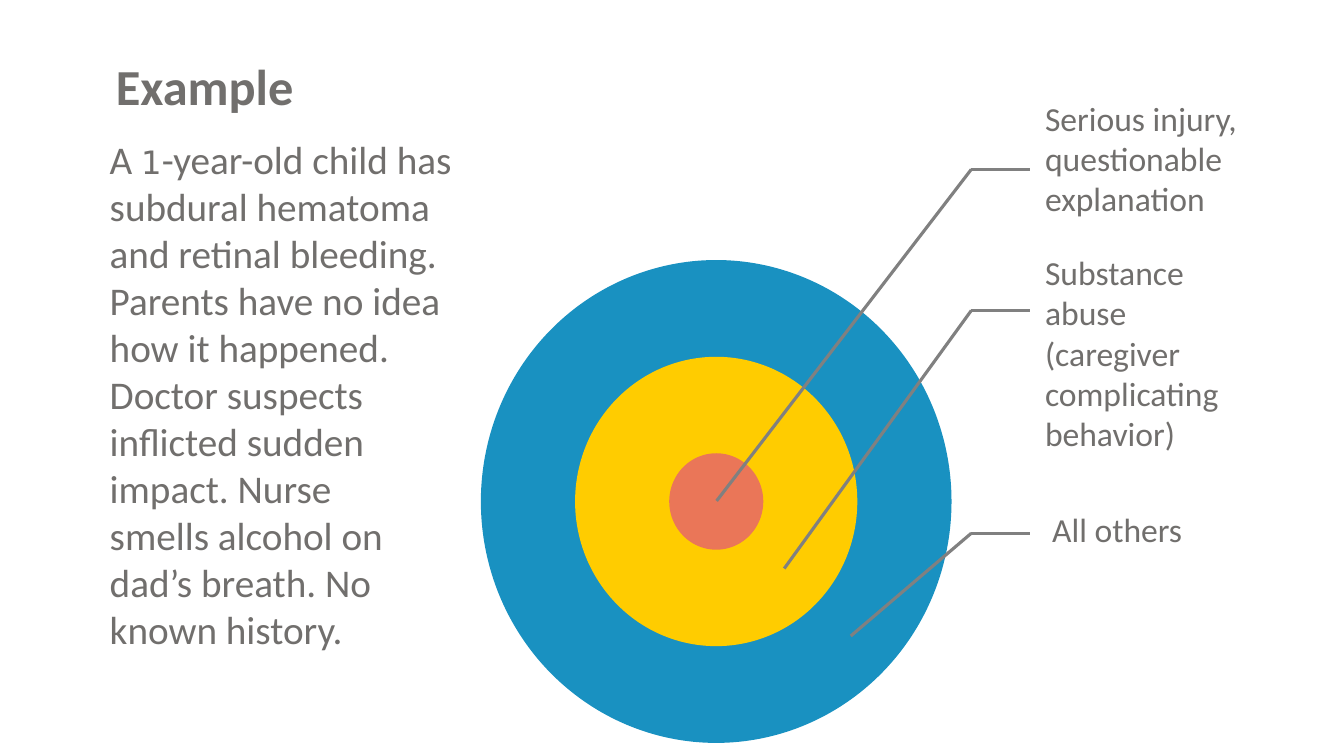
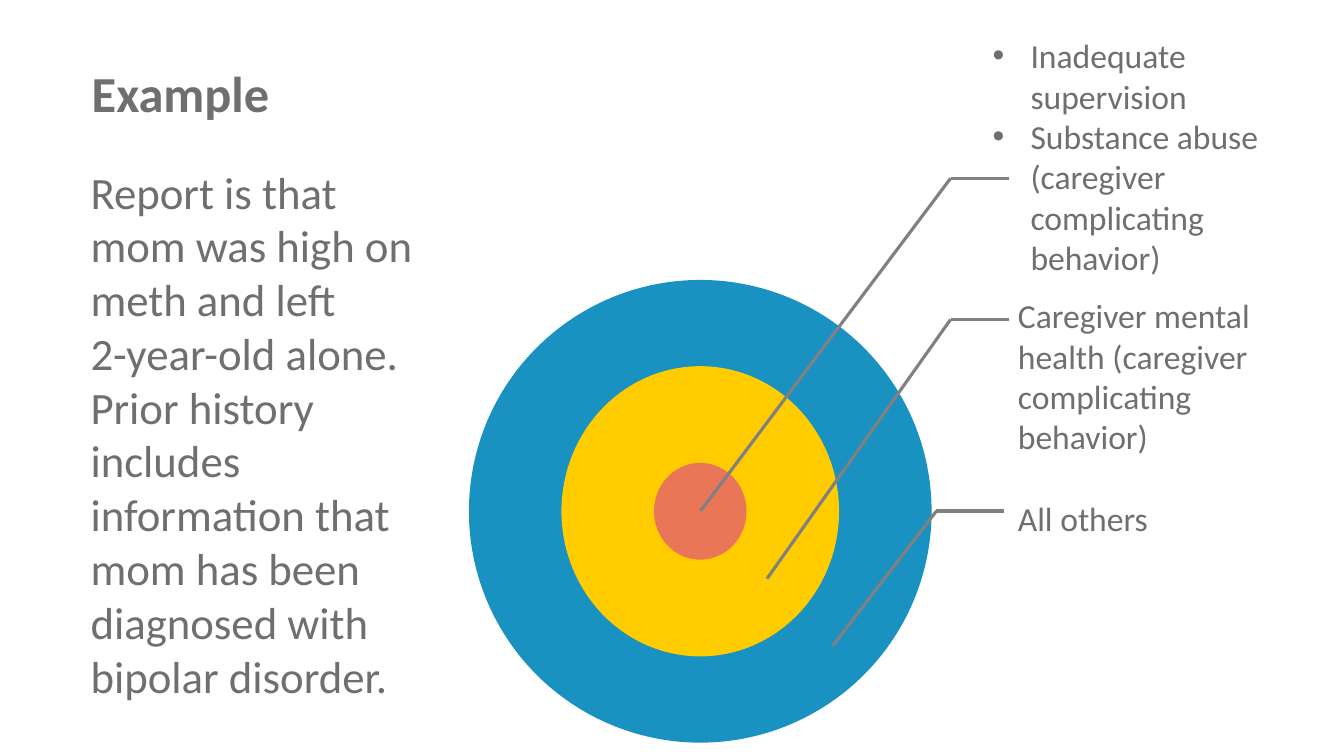
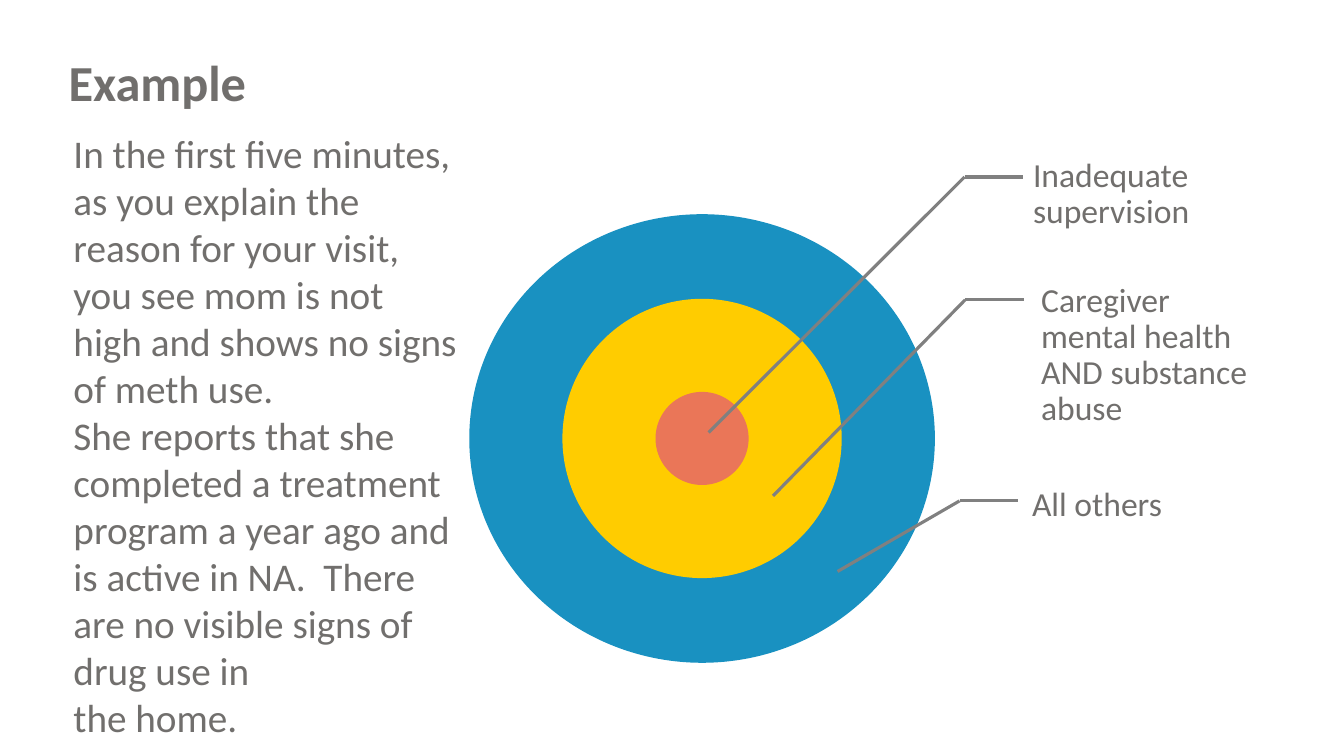
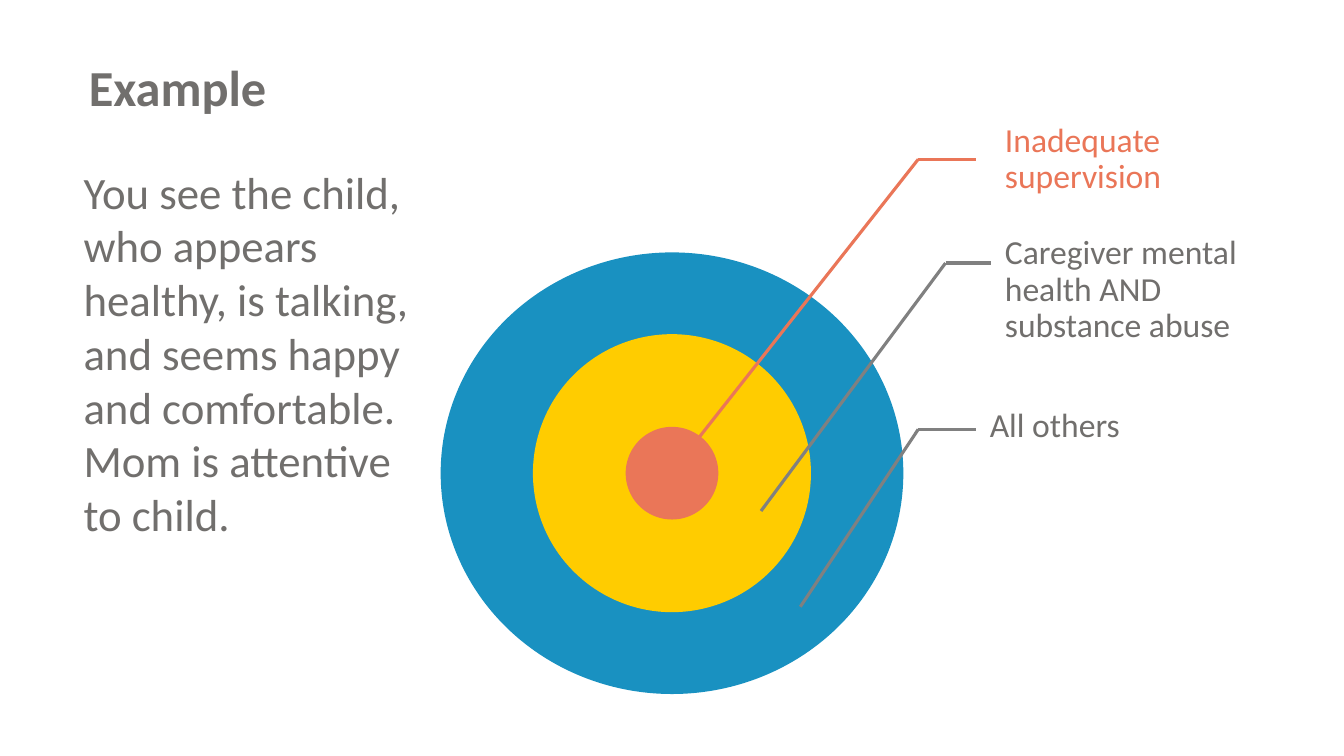
import lxml.etree
import pptx
import pptx.dml.color
import pptx.enum.shapes
import pptx.enum.text
import pptx.oxml.ns
import pptx.util

Pt = pptx.util.Pt
ANCHOR = pptx.enum.text.MSO_ANCHOR
COLORS = {"text": "716F6D", "outer": "1991C1", "middle": "FFCC00", "core": "EA7658", "line": "808080"}
BASE_FONT = {"name": "Calibri", "size": Pt(24), "bold": False}
TITLE_FONT = {"size": Pt(36), "bold": True}
ROOMY = {"word_wrap": True, "auto_size": pptx.enum.text.MSO_AUTO_SIZE.SHAPE_TO_FIT_TEXT}
SNUG = {
    "word_wrap": True,
    "auto_size": pptx.enum.text.MSO_AUTO_SIZE.NONE,
    "margin_left": Pt(10),
    "margin_right": Pt(2),
    "margin_top": Pt(2),
    "margin_bottom": Pt(2),
}
SNUG_MIDDLE = {**SNUG, "vertical_anchor": ANCHOR.MIDDLE}
TITLE_FRAME = {
    "word_wrap": True,
    "auto_size": pptx.enum.text.MSO_AUTO_SIZE.NONE,
    "vertical_anchor": ANCHOR.MIDDLE,
}


def color(name):
    """Return the named colour."""
    return pptx.dml.color.RGBColor.from_string(COLORS[name])


def apply(target, values):
    """Set each value of a dict as an attribute."""
    for name, value in values.items():
        setattr(target, name, value)


def add_span(para, text, font, paint="text"):
    """Add text to a paragraph, with line breaks where it has newlines."""
    for index, piece in enumerate(text.split("\n")):
        if index:
            para.add_line_break()
        span = para.add_run()
        span.text = piece
        apply(span.font, {**BASE_FONT, **font})
        span.font.color.rgb = color(paint)


def set_indent(para, left, first=0):
    """Set the left margin and first-line indent of a paragraph."""
    properties = para._p.get_or_add_pPr()
    properties.set("marL", str(Pt(left)))
    properties.set("indent", str(Pt(first)))
    return properties


def add_bullet(para):
    """Give a paragraph a hanging round bullet."""
    properties = set_indent(para, 27, -27)
    font = lxml.etree.SubElement(properties, pptx.oxml.ns.qn("a:buFont"))
    font.set("typeface", "Arial")
    mark = lxml.etree.SubElement(properties, pptx.oxml.ns.qn("a:buChar"))
    mark.set("char", "•")


def add_title(page, left, top):
    """Place and format the slide title."""
    box = page.shapes.title
    apply(box, {"left": Pt(left), "top": Pt(top), "width": Pt(838.8), "height": Pt(88.6)})
    apply(box.text_frame, TITLE_FRAME)
    para = box.text_frame.paragraphs[0]
    set_indent(para, 18)
    apply(para, {"alignment": pptx.enum.text.PP_ALIGN.LEFT, "line_spacing": 0.9})
    add_span(para, "Example", TITLE_FONT)


def add_text(page, place, paras, size=24, frame=ROOMY, paint="text", bullets=False):
    """Add a text box whose paragraphs are lists of text and font pairs or plain strings."""
    box = page.shapes.add_textbox(*map(Pt, place))
    apply(box.text_frame, frame)
    for index, content in enumerate(paras):
        para = box.text_frame.add_paragraph() if index else box.text_frame.paragraphs[0]
        if bullets:
            add_bullet(para)
        if frame is not ROOMY:
            para.line_spacing = 0.9
        spans = [(content, {})] if isinstance(content, str) else content
        for text, font in spans:
            add_span(para, text, {"size": Pt(size), **font}, paint)


def add_target(page, center, outer, core):
    """Draw three concentric ellipses, the middle one three times the core."""
    middle = [3 * length for length in core]
    for paint, (width, height) in (("outer", outer), ("middle", middle), ("core", core)):
        left, top = center[0] - width / 2, center[1] - height / 2
        ring = page.shapes.add_shape(
            pptx.enum.shapes.MSO_SHAPE.OVAL, Pt(left), Pt(top), Pt(width), Pt(height)
        )
        ring.shadow.inherit = False
        ring.fill.solid()
        ring.fill.fore_color.rgb = color(paint)
        ring.line.fill.background()


def add_leader(page, elbow, label_x, tip, paint="line"):
    """Draw a bent leader from a label to a ring."""
    for end in ((label_x, elbow[1]), tip):
        line = page.shapes.add_connector(
            pptx.enum.shapes.MSO_CONNECTOR.STRAIGHT, *map(Pt, (*elbow, *end))
        )
        line.line.color.rgb = color(paint)
        line.line.width = Pt(2.25)
        lxml.etree.SubElement(line._element.spPr, pptx.oxml.ns.qn("a:effectLst"))


def add_example(deck, title, target, leaders):
    """Add a slide with its title, target and leaders."""
    page = deck.slides.add_slide(deck.slide_layouts[5])
    add_title(page, *title)
    add_target(page, *target)
    for leader in leaders:
        add_leader(page, *leader)
    return page


def add_injury(deck):
    """Build the example of a serious injury."""
    page = add_example(
        deck,
        (57.6, 19.4),
        ((511.6, 358.2), (336.2, 344.9), (67.2, 68.9)),
        [
            ((693.8, 121), 736, (511.9, 357.8)),
            ((693.8, 221.8), 736, (560.2, 406.1)),
            ((693.8, 380.9), 736, (607.7, 454.3)),
        ],
    )
    story = [
        ("A ", {}),
        ("1", {"name": "DejaVu Sans", "size": Pt(23)}),
        (
            "-year-old child has subdural hematoma and retinal bleeding.  "
            "Parents have no idea how it happened.  Doctor suspects inflicted sudden impact. "
            "Nurse \nsmells alcohol on dad’s breath. No known history.",
            {},
        ),
    ]
    add_text(page, (71.3, 92.9, 270, 380.2), [story], 28)
    add_text(page, (739.4, 66.2, 157, 94.3), ["Serious injury,", "questionable explanation"])
    add_text(
        page, (739.4, 176.4, 157, 152.6), ["Substance abuse (caregiver complicating behavior)"]
    )
    add_text(page, (744.5, 360, 126.7, 36), ["All others"])


def add_report(deck):
    """Build the example of a child left alone."""
    page = add_example(
        deck,
        (40.3, 24.5),
        ((500.2, 365.2), (330.5, 330.5), (66.1, 69.1)),
        [
            ((679, 127.4), 720.7, (500.4, 365)),
            ((679, 228.2), 720.7, (547.9, 413.3)),
            ((668.9, 365), 717.1, (594.7, 461.5)),
        ],
    )
    story = [
        "Report is that mom was high on meth and left",
        "2-year-old alone.  Prior history includes information that mom has been "
        "diagnosed with \nbipolar disorder.",
    ]
    add_text(page, (57.6, 113.8, 259.2, 395.3), story, 32)
    add_text(
        page,
        (702, 21.6, 209.5, 181.4),
        ["Inadequate supervision", "Substance abuse (caregiver complicating behavior)"],
        bullets=True,
    )
    add_text(
        page,
        (720, 207.4, 193.7, 123.8),
        ["Caregiver mental health (caregiver complicating behavior)"],
    )
    add_text(page, (720, 352.1, 124.6, 36), ["All others"])


def add_visit(deck):
    """Build the example of the first five minutes."""
    page = add_example(
        deck,
        (23.8, 16.6),
        ((501.5, 313.2), (332.6, 320.4), (66.5, 66.5)),
        [
            ((689, 126.4), 730.8, (506.2, 308.9)),
            ((689.4, 214.2), 731.5, (552.2, 354.2)),
            ((685.4, 357.8), 727.2, (598.3, 408.2)),
        ],
    )
    story = (
        "In the first five minutes, as you explain the reason for your visit, "
        "you see mom is not high and shows no signs of meth use. \n"
        "She reports that she completed a treatment program a year ago and is active in NA.  "
        "There are no visible signs of drug use in \nthe home."
    )
    add_text(page, (45.4, 88.6, 288, 448.6), [story], 28)
    add_text(page, (727.9, 101.5, 175, 74.9), ["Inadequate supervision"], frame=SNUG_MIDDLE)
    add_text(
        page,
        (733.7, 200.2, 175, 97.2),
        ["Caregiver mental health AND substance abuse"],
        frame=SNUG,
    )
    add_text(page, (727.2, 346.3, 175, 97.2), ["All others"], frame=SNUG)


def add_healthy_child(deck):
    """Build the example of a healthy child."""
    page = add_example(
        deck,
        (38.2, 20.2),
        ((480, 338), (330.5, 315.4), (66.2, 66.2)),
        [
            ((655.9, 113.8), 697, (476.6, 341.3), "core"),
            ((675.4, 187.9), 707.8, (543.6, 365)),
            ((655.9, 306.7), 697, (571.7, 433.4)),
        ],
    )
    story = (
        "You see the child, who appears healthy, is talking,  and seems happy and comfortable.  "
        "Mom is attentive to child."
    )
    add_text(page, (52.6, 113.8, 256.3, 278.6), [story], 32)
    labels = [
        ((707.8, 90, 188.6, 48.2), "Inadequate supervision", "core"),
        ((707.8, 156.2, 190.1, 102.2), "Caregiver mental health AND substance abuse", "text"),
        ((697, 265.7, 188.6, 77.8), "All others", "text"),
    ]
    for place, label, paint in labels:
        add_text(page, place, [label], frame=SNUG_MIDDLE, paint=paint)


def main():
    """Build and save the deck."""
    deck = pptx.Presentation()
    apply(deck, {"slide_width": Pt(960), "slide_height": Pt(540)})
    for add_page in (add_injury, add_report, add_visit, add_healthy_child):
        add_page(deck)
    deck.save("out.pptx")


if __name__ == "__main__":
    main()
